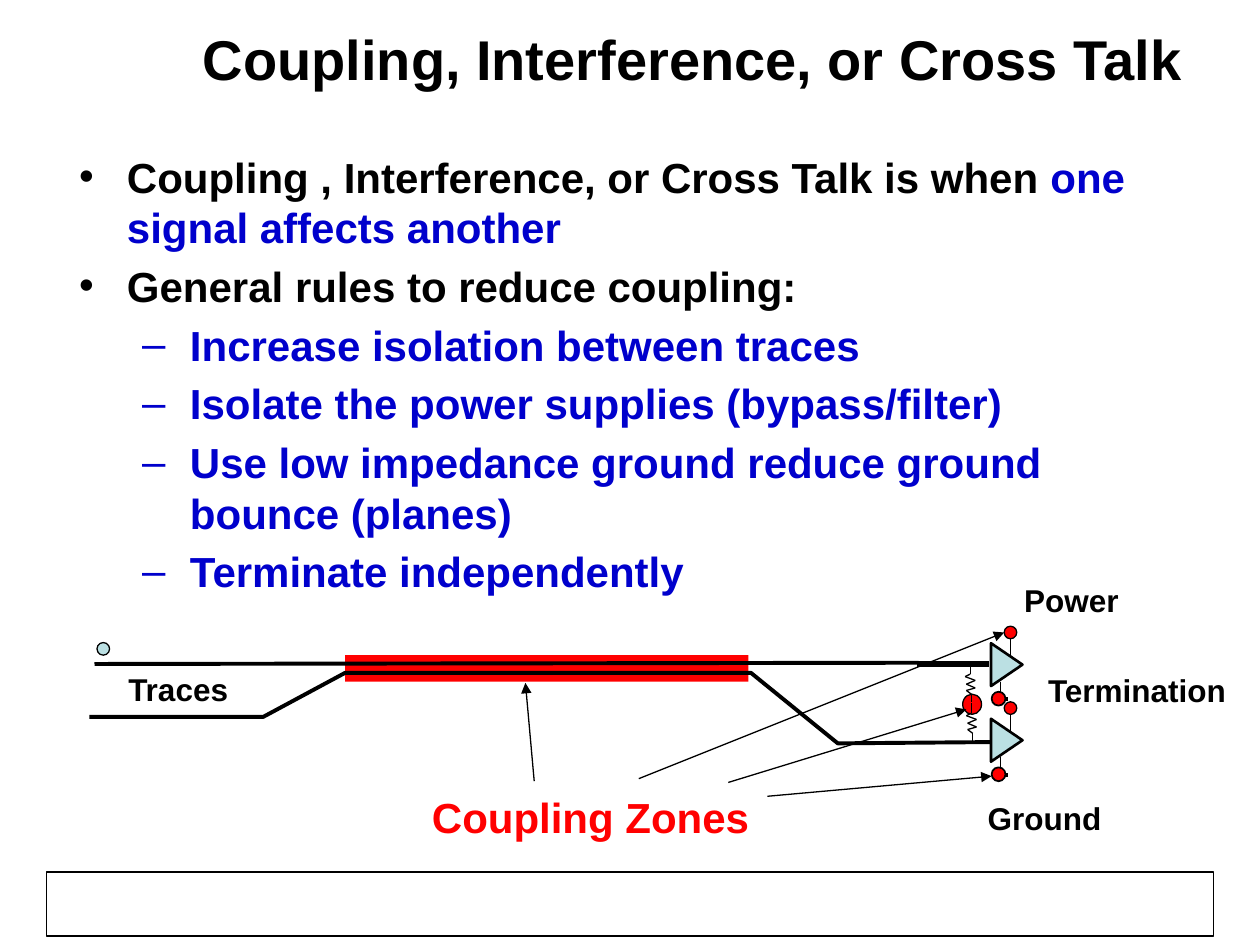
import dataclasses
import itertools

import lxml.etree
import pptx
import pptx.dml.color
import pptx.enum.shapes
import pptx.enum.text
import pptx.oxml.ns
import pptx.util

EMU_PER_PX = 9144  # 100 px to the inch
SHAPES = pptx.enum.shapes.MSO_SHAPE
ALIGN = pptx.enum.text.PP_ALIGN
ANCHOR = pptx.enum.text.MSO_ANCHOR


@dataclasses.dataclass(frozen=True)
class Theme:
    font: str = "Arial"
    black: str = "000000"
    blue: str = "0000CC"
    red: str = "FF0000"
    pale: str = "BBE0E3"
    title: int = 32
    body: int = 24
    label: int = 18
    thin: float = 0.75
    outline: float = 1.5
    trace: float = 2.25
    thick: float = 3


THEME = Theme()


@dataclasses.dataclass(frozen=True)
class Box:
    left: int
    top: int
    width: int
    height: int

    def inner(self, left, top, width, height):
        """Box placed relative to this one."""
        return Box(self.left + left, self.top + top, width, height)

    def point(self, x, y):
        return self.left + x, self.top + y

    def emu(self):
        return [px(value) for value in (self.left, self.top, self.width, self.height)]


def px(value):
    return pptx.util.Emu(value * EMU_PER_PX)


def color(value):
    return pptx.dml.color.RGBColor.from_string(value)


def add_xml(parent, tag, **attributes):
    element = lxml.etree.SubElement(parent, pptx.oxml.ns.qn(tag))
    for name, value in attributes.items():
        element.set(name, str(value))
    return element


def style_line(line, width):
    line.color.rgb = color(THEME.black)
    line.width = pptx.util.Pt(width)


def add_shape(slide, kind, box, fill=None, line=None):
    shape = slide.shapes.add_shape(kind, *box.emu())
    shape.shadow.inherit = False
    if fill:
        shape.fill.solid()
        shape.fill.fore_color.rgb = color(fill)
    else:
        shape.fill.background()
    if line:
        style_line(shape.line, line)
    else:
        shape.line.fill.background()
    return shape


def add_line(slide, start, end, width=THEME.thin, arrow=False):
    connector = slide.shapes.add_connector(
        pptx.enum.shapes.MSO_CONNECTOR.STRAIGHT, *map(px, start + end))
    style_line(connector.line, width)
    if arrow:
        add_xml(connector.line._get_or_add_ln(), "a:tailEnd", type="triangle")
    add_xml(connector._element.spPr, "a:effectLst")


def add_text(slide, box, paragraphs, size, align=ALIGN.LEFT, anchor=ANCHOR.TOP,
             wrap=True, bullets=None, space=0):
    """Each paragraph is a list of (text, colour) runs; bullets give (mark, indent)."""
    frame = slide.shapes.add_textbox(*box.emu()).text_frame
    frame.word_wrap = wrap
    frame.vertical_anchor = anchor
    if not wrap:
        frame.auto_size = pptx.enum.text.MSO_AUTO_SIZE.SHAPE_TO_FIT_TEXT
    for index, runs in enumerate(paragraphs):
        paragraph = frame.paragraphs[0] if index == 0 else frame.add_paragraph()
        paragraph.alignment = align
        if index and space:
            paragraph.space_before = pptx.util.Pt(space)
        if bullets:
            mark, indent = bullets[index]
            properties = paragraph._p.get_or_add_pPr()
            properties.set("marL", str(px(indent)))
            properties.set("indent", str(px(-38)))
            add_xml(properties, "a:buFont", typeface=THEME.font)
            add_xml(properties, "a:buChar", char=mark)
        for text, text_color in runs:
            run = paragraph.add_run()
            run.text = text
            run.font.name = THEME.font
            run.font.size = pptx.util.Pt(size)
            run.font.bold = True
            run.font.color.rgb = color(text_color)


def add_label(slide, box, text, size=THEME.label, text_color=THEME.black):
    add_text(slide, box, [[(text, text_color)]], size, wrap=False)


def add_title(slide, box):
    add_text(slide, box, [[("Coupling, Interference, or Cross Talk", THEME.black)]],
             THEME.title, align=ALIGN.CENTER, anchor=ANCHOR.MIDDLE)


def add_rules(slide, box):
    points = [
        [("Coupling , Interference, or Cross Talk is when ", THEME.black),
         ("one signal affects another", THEME.blue)],
        [("General rules to reduce coupling:", THEME.black)],
    ]
    rules = ["Increase isolation between traces",
             "Isolate the power supplies (bypass/filter)",
             "Use low impedance ground reduce ground bounce (planes)",
             "Terminate independently"]
    bullets = [("•", 38)] * len(points) + [("–", 88)] * len(rules)
    add_text(slide, box, points + [[(rule, THEME.blue)] for rule in rules],
             THEME.body, bullets=bullets, space=4.8)


def add_traces(slide, box):
    add_shape(slide, SHAPES.RECTANGLE, box.inner(203, 10, 320, 21), THEME.red)
    add_line(slide, box.point(4, 17), box.point(658, 16), THEME.trace)
    add_shape(slide, SHAPES.OVAL, box.inner(6, 0, 10, 10), THEME.pale, THEME.thin)
    points = [box.point(*point) for point in
              [(0, 59), (138, 59), (203, 24), (525, 24), (594, 80), (717, 79)]]
    builder = slide.shapes.build_freeform(*points[0], scale=EMU_PER_PX)
    builder.add_line_segments(points[1:], close=False)
    trace = builder.convert_to_shape()
    trace.shadow.inherit = False
    trace.fill.background()
    style_line(trace.line, THEME.trace)
    add_line(slide, box.point(657, 17), box.point(714, 17), THEME.thick)
    add_label(slide, box.inner(21, 17, 100, 40), "Traces")


def add_resistor(slide, box):
    zigzag = [(4, 0), (4, 8), (0, 10), (8, 13), (1, 16),
              (8, 19), (1, 21), (5, 24), (5, 30)]
    for start, end in itertools.pairwise(zigzag):
        add_line(slide, box.point(*start), box.point(*end))


def add_termination(slide, box):
    """Two resistors in series, with the coupling spot at their joint."""
    add_shape(slide, SHAPES.OVAL, box.inner(-2, 24, 15, 16), THEME.red, THEME.thin)
    for left, top in [(0, 0), (1, 31)]:
        add_resistor(slide, box.inner(left, top, 8, 30))


def add_receiver(slide, box):
    """Amplifier with a power pin above and a ground pin below."""
    add_shape(slide, SHAPES.OVAL, box.inner(15, -18, 10, 10), THEME.red, THEME.thin)
    add_line(slide, box.point(7, 40), box.point(18, 40), THEME.trace)
    amplifier = add_shape(slide, SHAPES.ISOSCELES_TRIANGLE, box, THEME.pale, THEME.outline)
    amplifier.rotation = 90
    add_line(slide, box.point(20, 5), box.point(20, -8))
    add_line(slide, box.point(12, 39), box.point(12, 26))
    add_shape(slide, SHAPES.OVAL, box.inner(5, 34, 11, 11), THEME.red, 1)


def add_callouts(slide, box):
    arrows = [((91, 2), (84, -76)), ((245, 3), (434, -55)),
              ((174, 0), (464, -116)), ((276, 14), (454, -2))]
    for start, end in arrows:
        add_line(slide, box.point(*start), box.point(*end), arrow=True)
    add_label(slide, box.inner(0, 5, 274, 51), "Coupling Zones", THEME.body, THEME.red)


def add_pin_labels(slide, box):
    add_label(slide, box.inner(29, 0, 96, 40), "Power")
    add_label(slide, box.inner(0, 173, 111, 40), "Ground")
    add_label(slide, box.inner(48, 72, 163, 40), "Termination")


def main():
    presentation = pptx.Presentation()
    presentation.slide_width, presentation.slide_height = px(1000), px(750)
    slide = presentation.slides.add_slide(presentation.slide_layouts[6])
    add_shape(slide, SHAPES.RECTANGLE, Box(37, 692, 926, 51), line=THEME.thin)
    add_title(slide, Box(100, 0, 900, 92))
    add_rules(slide, Box(53, 115, 900, 357))
    add_traces(slide, Box(71, 510, 717, 80))
    add_termination(slide, Box(766, 527, 13, 61))
    for top in (515, 575):
        add_receiver(slide, Box(782, top, 34, 25))
    add_callouts(slide, Box(333, 618, 274, 56))
    add_pin_labels(slide, Box(774, 456, 211, 213))
    presentation.save("out.pptx")


if __name__ == "__main__":
    main()
